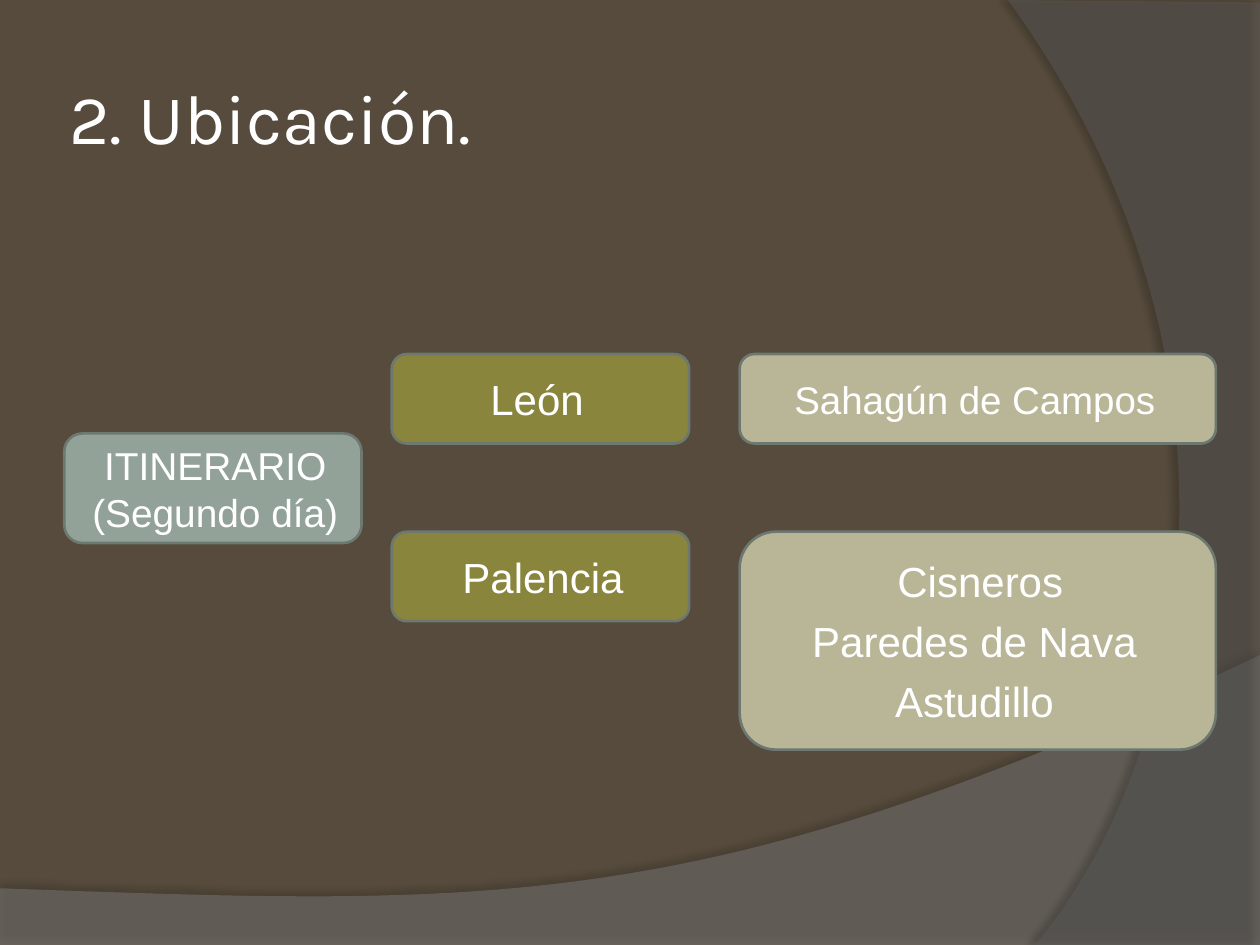
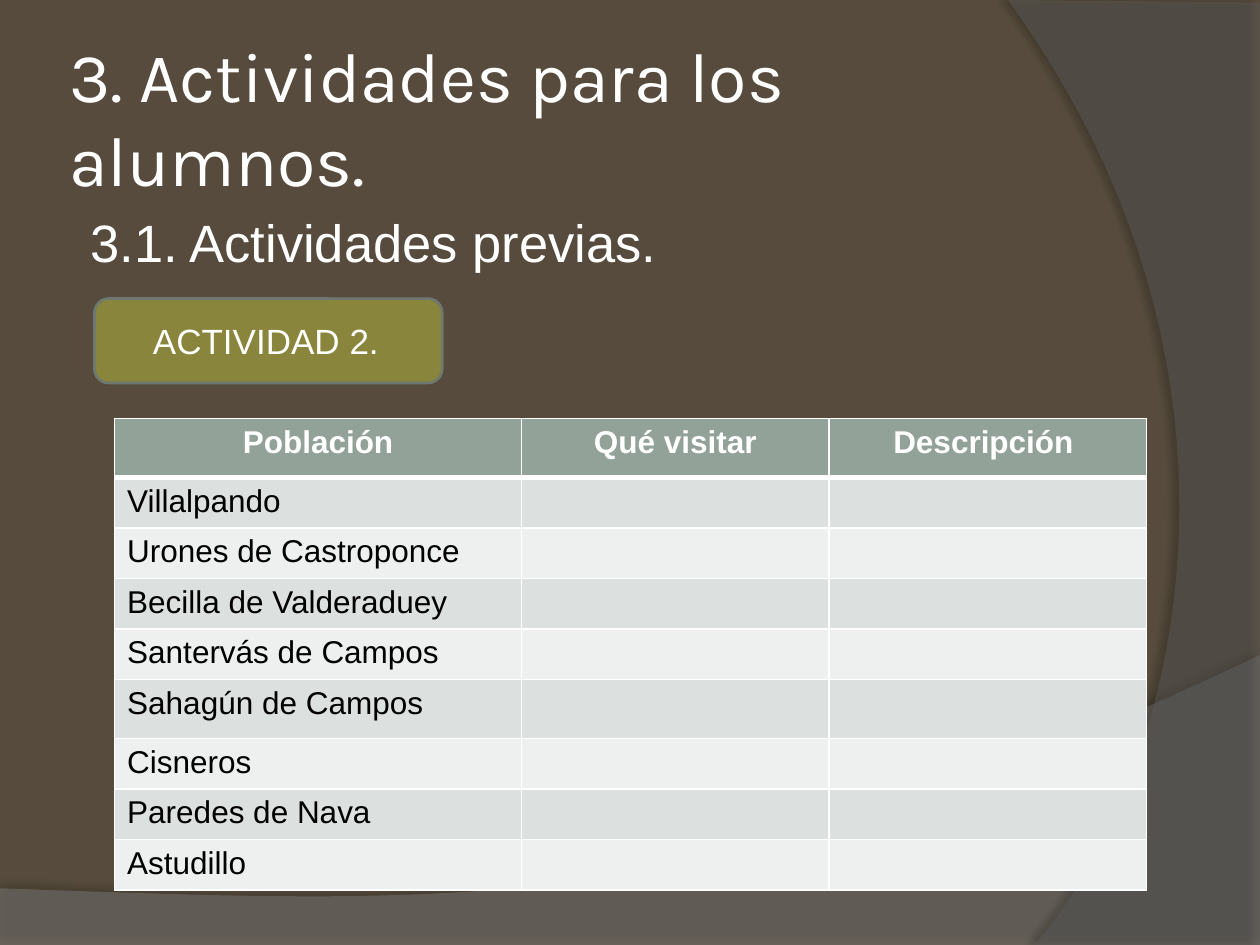
from dataclasses import dataclass

from lxml.etree import SubElement
from pptx import Presentation
from pptx.dml.color import RGBColor
from pptx.enum.shapes import MSO_SHAPE
from pptx.enum.text import MSO_ANCHOR, PP_ALIGN
from pptx.oxml.ns import qn
from pptx.util import Inches, Pt

# The slide is a grid of 100 columns by 75 rows of square cells.
COLUMNS, ROWS = 100, 75
CELL = Inches(0.1)


@dataclass(frozen=True)
class Theme:
    background: str = "564B3C"
    lower_band: str = "7F7F7F"
    side_band: str = "5E5E5E"
    sage: str = "93A299"
    olive: str = "8A853C"
    sand: str = "B9B697"
    outline: str = "6D7871"
    light: str = "FFFFFF"
    dark: str = "000000"
    stripes: tuple = ("DCE0DE", "EEF0EF")
    title_font: str = "Karla"
    body_font: str = "Arial"
    title: float = 40
    subtitle: float = 30
    place: float = 24
    start: float = 22.2
    town: float = 22
    activity: float = 20
    cell: float = 18
    spacing: float = 0.23


THEME = Theme()


@dataclass(frozen=True)
class Box:
    """An area of the slide, in grid cells."""
    left: float
    top: float
    width: float
    height: float

    def inner(self, left, top, width, height):
        return Box(self.left + left, self.top + top, width, height)

    def lengths(self):
        return [round(side * CELL) for side in (self.left, self.top, self.width, self.height)]


PAGE = Box(0, 0, COLUMNS, ROWS)
TITLE = PAGE.inner(5, 3, 81.7, 12.5)


def color(code):
    return RGBColor.from_string(code)


def write(para, text, size, ink=THEME.light, font=THEME.body_font, bold=False):
    span = para.add_run()
    span.text = text
    span.font.size = Pt(size)
    span.font.name = font
    span.font.bold = bold
    span.font.color.rgb = color(ink)


def indent(para, inches):
    para._p.get_or_add_pPr().set("marL", str(Inches(inches)))


# Shared background
def curve(start, first, second, end, steps=48):
    """Points along a cubic curve, without its start."""
    points = []
    for step in range(1, steps + 1):
        t = step / steps
        weights = ((1 - t) ** 3, 3 * t * (1 - t) ** 2, 3 * t * t * (1 - t), t ** 3)
        points.append(tuple(
            sum(weight * value for weight, value in zip(weights, axis))
            for axis in zip(start, first, second, end)))
    return points


def add_band(page, points, fill, opacity, shade, distance, direction):
    corners = [(round(x * CELL), round(y * CELL)) for x, y in points]
    builder = page.shapes.build_freeform(*corners[0])
    builder.add_line_segments(corners[1:], close=True)
    band = builder.convert_to_shape()
    band.fill.solid()
    band.fill.fore_color.rgb = color(fill)
    band.line.fill.background()
    band.shadow.inherit = False
    properties = band._element.spPr
    tint = properties.find(qn("a:solidFill"))[0]
    SubElement(tint, qn("a:alpha"), val=str(opacity * 1000))
    shadow = SubElement(
        properties.find(qn("a:effectLst")), qn("a:outerShdw"), blurRad=str(Pt(4)),
        dist=str(Pt(distance)), dir=str(direction * 60000), algn="ctr", rotWithShape="0")
    ink = SubElement(shadow, qn("a:srgbClr"), val=THEME.dark)
    SubElement(ink, qn("a:alpha"), val=str(shade * 1000))


def add_page(deck, title):
    page = deck.slides.add_slide(deck.slide_layouts[6])
    page.background.fill.solid()
    page.background.fill.fore_color.rgb = color(THEME.background)
    lower = [(0, 70.5), (0, ROWS), (COLUMNS, ROWS), (COLUMNS, 52)]
    lower += curve(lower[-1], (55.9, 72.9), (39.1, 71.9), lower[0])
    add_band(page, lower, THEME.lower_band, 45, 35, 3.5, 270)
    side = [(COLUMNS, 0.2), (COLUMNS, ROWS), (82.1, ROWS)]
    side += curve(side[-1], (93.5, 61.9), (101.8, 30), (80, 0))
    add_band(page, side, THEME.side_band, 40, 45, 4, 180)
    para = add_text(page, TITLE, MSO_ANCHOR.MIDDLE, 0.05)
    write(para, title, THEME.title, font=THEME.title_font)
    return page


# Text boxes, cards and table
def add_text(page, box, anchor, inset):
    frame = page.shapes.add_textbox(*box.lengths()).text_frame
    frame.word_wrap = True
    frame.vertical_anchor = anchor
    frame.margin_left = frame.margin_right = Inches(inset)
    frame.margin_top = frame.margin_bottom = Inches(0.05)
    return frame.paragraphs[0]


def add_card(page, box, lines, fill, size, spacing=THEME.spacing):
    card = page.shapes.add_shape(MSO_SHAPE.ROUNDED_RECTANGLE, *box.lengths())
    card.shadow.inherit = False
    card.fill.solid()
    card.fill.fore_color.rgb = color(fill)
    card.line.color.rgb = color(THEME.outline)
    card.line.width = Pt(1.5)
    frame = card.text_frame
    frame.word_wrap = True
    frame.vertical_anchor = MSO_ANCHOR.MIDDLE
    for number, line in enumerate(lines):
        para = frame.add_paragraph() if number else frame.paragraphs[0]
        para.alignment = PP_ALIGN.CENTER
        para.space_before = Pt(size * spacing)
        indent(para, 0.04)
        write(para, line, size)


def add_itinerary(page, box):
    add_card(page, box.inner(0, 6.3, 23.6, 8.7), ["ITINERARIO (Segundo día)"],
             THEME.sage, THEME.start)
    stages = [
        ("León ", ["Sahagún de Campos "], THEME.town, 7.1),
        ("Palencia", [" Cisneros ", "Paredes de Nava ", "Astudillo "], THEME.place, 17.3),
    ]
    for number, (province, towns, size, height) in enumerate(stages):
        top = number * 14.1
        add_card(page, box.inner(26, top, 23.6, 7.1), [province], THEME.olive, THEME.place)
        add_card(page, box.inner(53.6, top, 37.8, height), towns, THEME.sand, size)


def style_cell(cell, fill, top, bottom):
    properties = cell._tc.get_or_add_tcPr()
    for side, width in (("L", 1), ("R", 1), ("T", top), ("B", bottom)):
        border = SubElement(properties, qn(f"a:ln{side}"), w=str(Pt(width)))
        SubElement(SubElement(border, qn("a:solidFill")), qn("a:srgbClr"), val=THEME.light)
    cell.fill.solid()
    cell.fill.fore_color.rgb = color(fill)


def add_visits(page, box):
    headings = ["Población", " Qué visitar ", "Descripción "]
    towns = ["Villalpando", "Urones de Castroponce", "Becilla de Valderaduey",
             "Santervás de Campos", "Sahagún de Campos", "Cisneros",
             "Paredes de Nava", "Astudillo"]
    widths = [32.3, 24.4, 25.2]
    heights = [4.7, 3.8, 3.8, 3.9, 3.9, 4.7, 3.8, 3.9, 3.9]
    table = page.shapes.add_table(len(heights), len(widths), *box.lengths()).table
    table.horz_banding = False
    for column, width in zip(table.columns, widths):
        column.width = round(width * CELL)
    for row, height in zip(table.rows, heights):
        row.height = round(height * CELL)
    for column, heading in enumerate(headings):
        cell = table.cell(0, column)
        style_cell(cell, THEME.sage, 1, 3)
        para = cell.text_frame.paragraphs[0]
        para.alignment = PP_ALIGN.CENTER
        write(para, heading, THEME.cell, bold=True)
    for row, town in enumerate(towns, 1):
        for column in range(len(widths)):
            style_cell(table.cell(row, column), THEME.stripes[(row - 1) % 2],
                       3 if row == 1 else 1, 1)
        write(table.cell(row, 0).text_frame.paragraphs[0], town, THEME.cell, THEME.dark)


# Slides
def add_location_page(deck):
    page = add_page(deck, "2. Ubicación.")
    add_itinerary(page, PAGE.inner(5.1, 28.1, 91.4, 31.4))


def add_activity_page(deck):
    page = add_page(deck, "3. Actividades para los alumnos.")
    body = PAGE.inner(5, 16.2, 89.9, 52.8)
    para = add_text(page, body, MSO_ANCHOR.TOP, 0.1)
    para.space_before = Pt(THEME.subtitle * THEME.spacing)
    indent(para, 0.12)
    write(para, "3.1. Actividades previas.", THEME.subtitle)
    add_card(page, body.inner(2.5, 7.5, 27.6, 6.7), ["ACTIVIDAD 2. "],
             THEME.olive, THEME.activity, spacing=0)
    add_visits(page, body.inner(4.1, 17, 81.9, 36.4))


def main():
    deck = Presentation()
    deck.slide_width = COLUMNS * CELL
    deck.slide_height = ROWS * CELL
    add_location_page(deck)
    add_activity_page(deck)
    deck.save("out.pptx")


if __name__ == "__main__":
    main()
